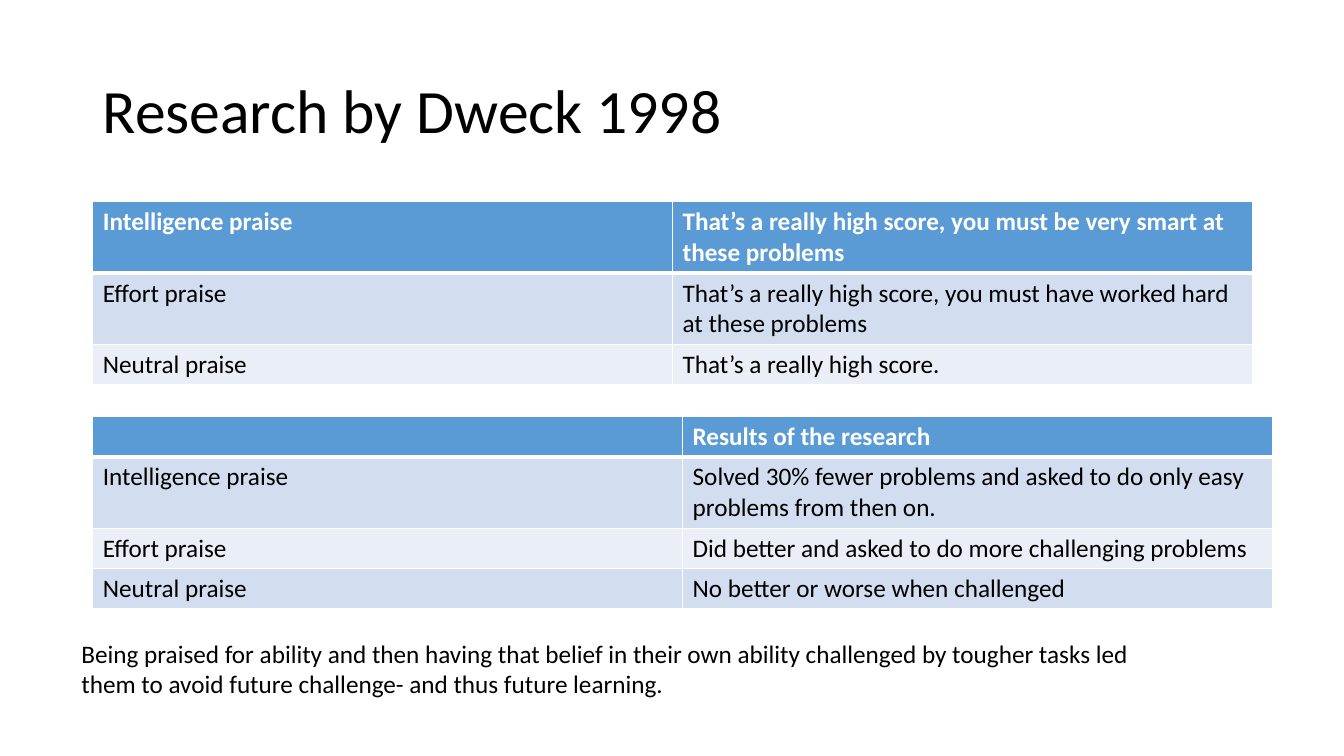
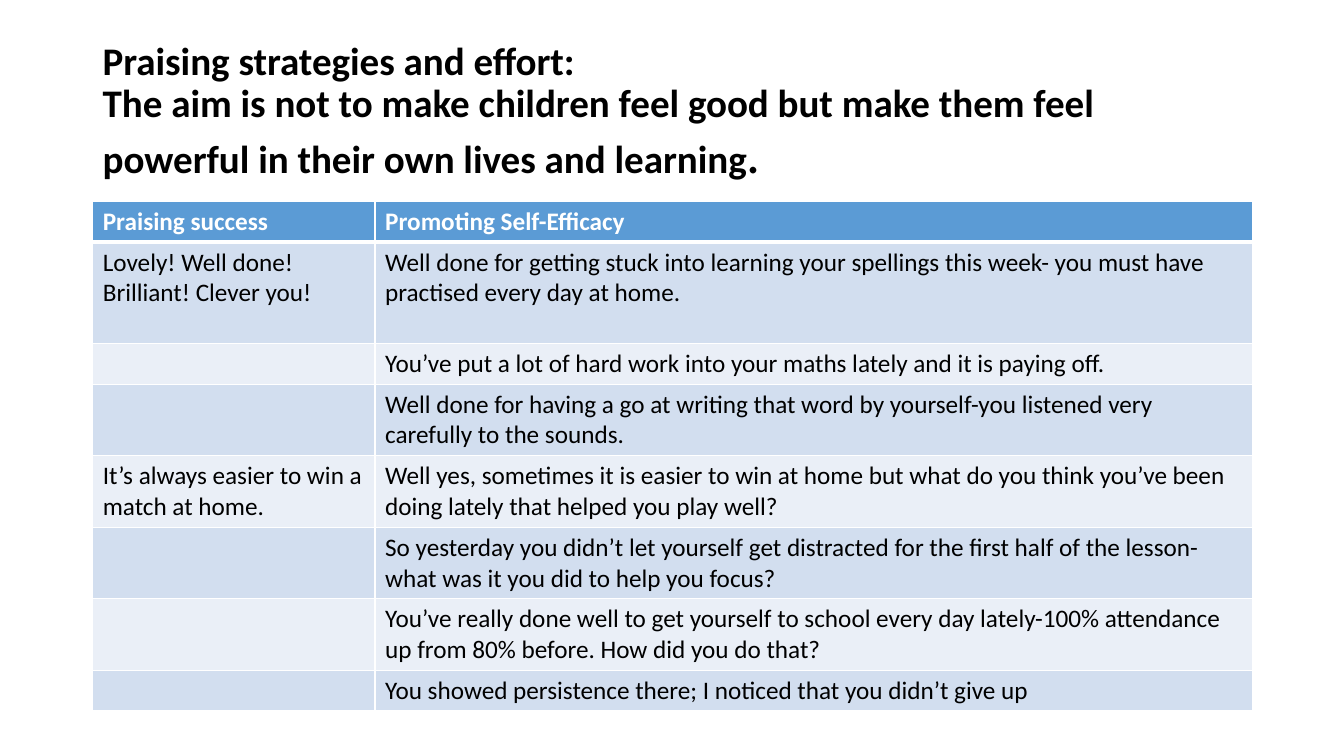
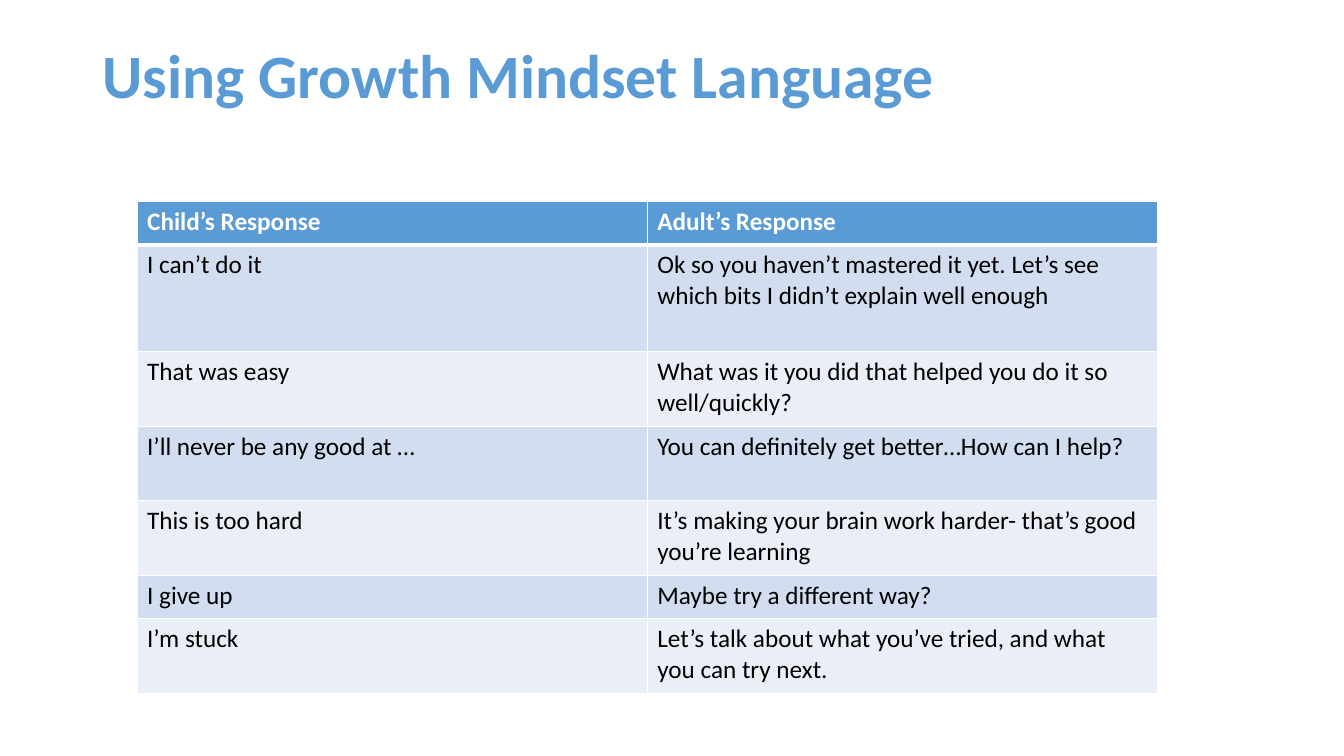
"""Build three slides on praise and growth mindset language."""
from pptx import Presentation
from pptx.dml.color import RGBColor as RGB
from pptx.enum.text import MSO_ANCHOR as Anchor
from pptx.oxml.ns import qn
from pptx.util import Inches, Pt
from lxml.etree import SubElement as Sub, Element

BLACK = RGB(0, 0, 0)
WHITE = RGB(255, 255, 255)
BLUE = RGB(0x5B, 0x9B, 0xD5)
BANDS = RGB(0xEA, 0xEF, 0xF7), RGB(0xD2, 0xDE, 0xEF)

BODY = {"name": "Calibri", "size": Pt(18), "bold": False}
HEAD = {**BODY, "bold": True}
TITLE = {**BODY, "size": Pt(44)}
AIM = {**HEAD, "size": Pt(27.9)}
STOP = {**BODY, "size": Pt(39.6)}
BLUE_TITLE = {**TITLE, "bold": True}

TITLE_BOX = 0.92, 0.4, 11.5, 1.45
NOTE_BOX = 0.71, 6.28, 11.14, 0.71
ONE, TWO, THREE = 0.4, 0.71, 1.01

SLIDES = [
    {
        "title": [[("Research by Dweck 1998", TITLE)]],
        "tables": [
            {
                "at": (0.92, 2), "cols": [5.75, 5.75],
                "heights": [TWO, TWO, ONE],
                "rows": [
                    ("Intelligence praise", "That’s a really high score, you must be very smart at these problems"),
                    ("Effort praise", "That’s a really high score, you must have worked hard at these problems"),
                    ("Neutral praise", "That’s a really high score."),
                ],
            },
            {
                "at": (0.92, 4.13), "cols": [5.85, 5.85],
                "heights": [ONE, TWO, ONE, ONE],
                "rows": [
                    ("", "Results of the research"),
                    ("Intelligence praise", "Solved 30% fewer problems and asked to do only easy problems from then on."),
                    ("Effort praise", "Did better and asked to do more challenging problems"),
                    ("Neutral praise", "No better or worse when challenged"),
                ],
            },
        ],
        "note": "Being praised for ability and then having that belief in their own ability challenged "
                "by tougher tasks led them to avoid future challenge- and thus future learning.",
    },
    {
        "title": [
            [("Praising strategies and effort:", AIM)],
            [("The aim is not to make children feel good but make them feel powerful "
              "in their own lives and learning", AIM), (".", STOP)],
        ],
        "tables": [
            {
                "at": (0.92, 2), "cols": [2.8, 8.7],
                "heights": [ONE, THREE, ONE, TWO, TWO, TWO, TWO, ONE],
                "rows": [
                    ("Praising success", "Promoting Self-Efficacy"),
                    ("Lovely! Well done! Brilliant! Clever you!",
                     "Well done for getting stuck into learning your spellings this week- "
                     "you must have practised every day at home."),
                    ("", "You’ve put a lot of hard work into your maths lately and it is paying off."),
                    ("", "Well done for having a go at writing that word by yourself-"
                         "you listened very carefully to the sounds."),
                    ("It’s always easier to win a match at home.",
                     "Well yes, sometimes it is easier to win at home but what do you think "
                     "you’ve been doing lately that helped you play well?"),
                    ("", "So yesterday you didn’t let yourself get distracted for the first half "
                         "of the lesson- what was it you did to help you focus?"),
                    ("", "You’ve really done well to get yourself to school every day lately-"
                         "100% attendance up from 80% before. How did you do that?"),
                    ("", "You showed persistence there; I noticed that you didn’t give up"),
                ],
            },
        ],
    },
    {
        "title": [[("Using Growth Mindset Language", BLUE_TITLE)]],
        "color": BLUE,
        "anchor": Anchor.TOP,
        "tables": [
            {
                "at": (1.36, 2), "cols": [5.06, 5.06],
                "heights": [0.43, 1.06, 0.74, 0.74, 0.74, 0.43, 0.74],
                "rows": [
                    ("Child’s Response", "Adult’s Response"),
                    ("I can’t do it",
                     "Ok so you haven’t mastered it yet. Let’s see which bits I didn’t explain well enough"),
                    ("That was easy", "What was it you did that helped you do it so well/quickly?"),
                    ("I’ll never be any good at …", "You can definitely get better…How can I help?"),
                    ("This is too hard", "It’s making your brain work harder- that’s good you’re learning"),
                    ("I give up", "Maybe try a different way?"),
                    ("I’m stuck", "Let’s talk about what you’ve tried, and what you can try next."),
                ],
            },
        ],
    },
]


def style(font, form, color):
    """Apply a format and a colour to a font."""
    for key, value in form.items():
        setattr(font, key, value)
    font.color.rgb = color


def add_text(slide, box, lines, color=BLACK, anchor=Anchor.TOP, space=None):
    """Add a wrapped text box holding lines of styled runs."""
    frame = slide.shapes.add_textbox(*map(Inches, box)).text_frame
    frame.word_wrap = True
    frame.vertical_anchor = anchor
    para = frame.paragraphs[0]
    para.line_spacing = space
    for num, line in enumerate(lines):
        if num:
            para.add_line_break()
        for text, form in line:
            run = para.add_run()
            run.text = text
            style(run.font, form, color)


def add_edges(cell, row):
    """Draw white cell borders, thick beneath the header."""
    props = cell._tc.get_or_add_tcPr()
    thick = {"T": row == 1, "B": row == 0}
    for num, side in enumerate("LRTB"):
        line = Element(qn(f"a:ln{side}"), w=str(Pt(3 if thick.get(side) else 1)))
        Sub(Sub(line, qn("a:solidFill")), qn("a:srgbClr"), val=str(WHITE))
        props.insert(num, line)


def add_grid(slide, at, cols, heights, rows):
    """Add a table with a blue header and banded rows."""
    size = sum(cols), sum(heights)
    grid = slide.shapes.add_table(len(rows), len(cols), *map(Inches, at + size)).table
    for col, width in zip(grid.columns, cols):
        col.width = Inches(width)
    for row, high in zip(grid.rows, heights):
        row.height = Inches(high)
    for r, texts in enumerate(rows):
        form, color, back = (BODY, BLACK, BANDS[r % 2]) if r else (HEAD, WHITE, BLUE)
        for c, text in enumerate(texts):
            cell = grid.cell(r, c)
            cell.text = text
            style(cell.text_frame.paragraphs[0].font, form, color)
            cell.fill.solid()
            cell.fill.fore_color.rgb = back
            add_edges(cell, r)


def main():
    """Build and save the deck."""
    deck = Presentation()
    deck.slide_width, deck.slide_height = Inches(13.33), Inches(7.5)
    for data in SLIDES:
        slide = deck.slides.add_slide(deck.slide_layouts[6])
        add_text(slide, TITLE_BOX, data["title"], data.get("color", BLACK),
                 data.get("anchor", Anchor.MIDDLE), 0.9)
        for table in data["tables"]:
            add_grid(slide, **table)
        if "note" in data:
            add_text(slide, NOTE_BOX, [[(data["note"], BODY)]])
    deck.save("out.pptx")


if __name__ == "__main__":
    main()
